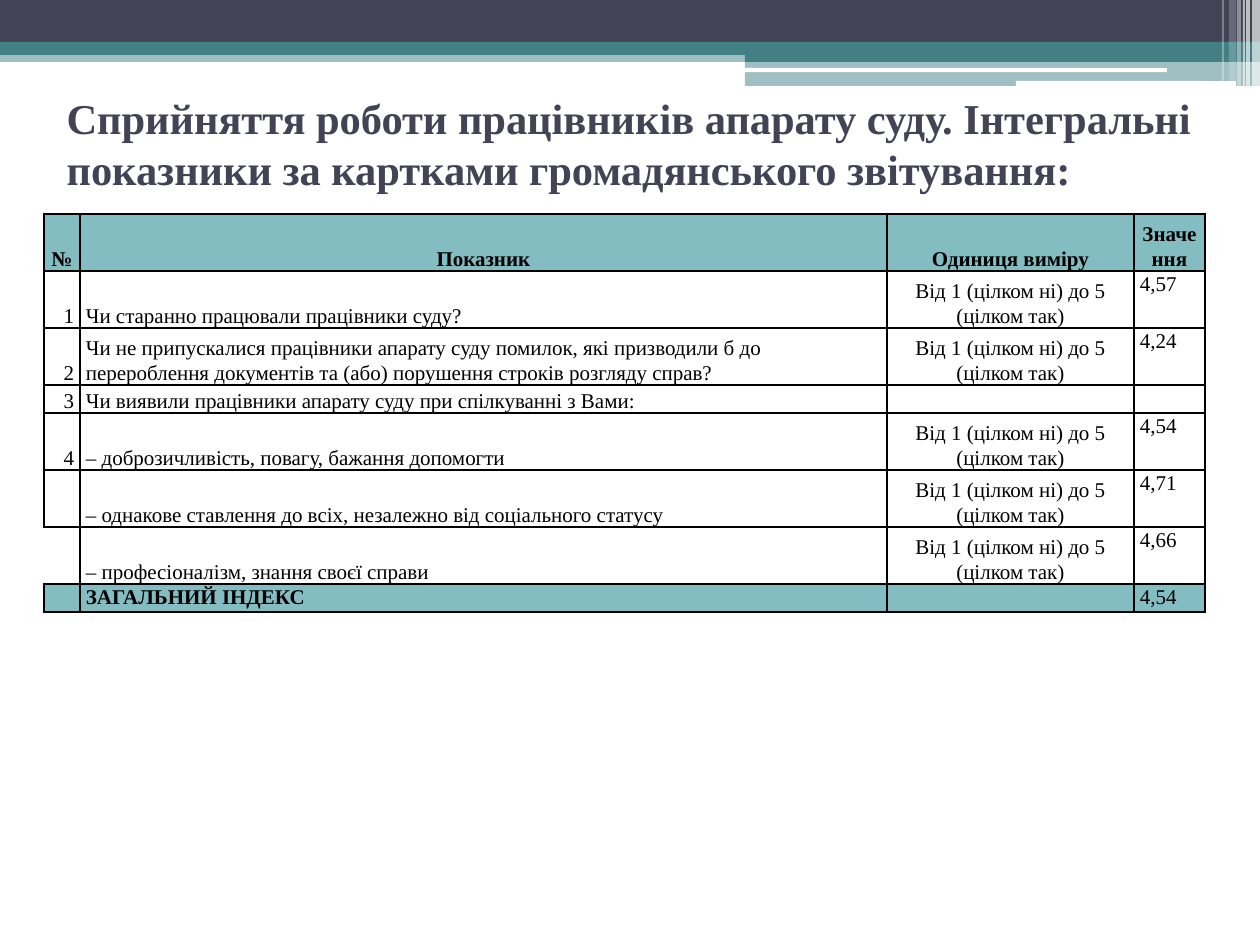
from lxml import etree
from pptx import Presentation
from pptx.dml.color import RGBColor
from pptx.enum.shapes import MSO_SHAPE
from pptx.enum.text import MSO_ANCHOR, MSO_AUTO_SIZE, PP_ALIGN
from pptx.oxml.ns import qn
from pptx.util import Emu, Pt

RECT, ROUND = MSO_SHAPE.RECTANGLE, MSO_SHAPE.ROUNDED_RECTANGLE
TOP, MIDDLE, BOTTOM = MSO_ANCHOR.TOP, MSO_ANCHOR.MIDDLE, MSO_ANCHOR.BOTTOM
LEFT, CENTER, RIGHT = PP_ALIGN.LEFT, PP_ALIGN.CENTER, PP_ALIGN.RIGHT

NAVY = RGBColor(0x42, 0x44, 0x56)
TEAL = RGBColor(0x43, 0x80, 0x86)
PALE_TEAL = RGBColor(0x83, 0xBC, 0xC1)
WHITE = RGBColor(0xFF, 0xFF, 0xFF)
BLACK = RGBColor(0, 0, 0)
FONT = "Times New Roman"
PX_PER_INCH = 126

TITLE = ("Сприйняття роботи працівників апарату суду. Інтегральні "
         "показники за картками громадянського звітування:")
SCALE_TEXT = "Від 1 (цілком ні) до 5 (цілком так)"
HEADER = ("№", "Показник", "Одиниця виміру", "Значення")
INDICATORS = [
    ("1", "Чи старанно працювали працівники суду?", SCALE_TEXT, "4,57"),
    ("2", "Чи не припускалися працівники апарату суду помилок, які призводили б до "
          "перероблення документів та (або) порушення строків розгляду справ?",
     SCALE_TEXT, "4,24"),
    ("3", "Чи виявили працівники апарату суду при спілкуванні з Вами:", "", ""),
    ("4", "– доброзичливість, повагу, бажання допомогти", SCALE_TEXT, "4,54"),
    ("", "– однакове ставлення до всіх, незалежно від соціального статусу",
     SCALE_TEXT, "4,71"),
    ("", "– професіоналізм, знання своєї справи", SCALE_TEXT, "4,66"),
]
TOTAL = ("", "ЗАГАЛЬНИЙ ІНДЕКС", "", "4,54")
COLUMN_WIDTHS = (36, 807, 247, 71)
ROW_HEIGHTS = (57, 57, 57, 28, 57, 57, 57, 28)
COLUMN_ALIGNS = (RIGHT, LEFT, CENTER, LEFT)
COLUMN_ANCHORS = (BOTTOM, BOTTOM, BOTTOM, TOP)

# Left, top, width, height, preset, colour, opacity in percent
BANDS = [
    (0, 50, 1260, 12, RECT, TEAL, 50),
    (0, 0, 1260, 42, RECT, NAVY, 100),
    (0, 42, 1260, 13, RECT, TEAL, 100),
    (745, 49, 515, 13, RECT, TEAL, 100),
    (745, 61, 515, 25, RECT, TEAL, 50),
    (745, 68, 422, 4, ROUND, WHITE, 100),
    (1016, 81, 220, 5, ROUND, WHITE, 100),
]
# Left, width, height, opacity in percent
STRIPES = [(1252, 8, 86, 65), (1246, 4, 86, 65), (1243, 2, 86, 60),
           (1237, 4, 86, 40), (1229, 7, 81, 20), (1222, 2, 81, 30)]


def px(length):
    return Emu(round(length * 914400 / PX_PER_INCH))


def set_all(target, values):
    for name, value in values.items():
        setattr(target, name, value)


def add_block(slide, box, preset, color, opacity):
    block = slide.shapes.add_shape(preset, *map(px, box))
    block.shadow.inherit = False
    block.line.fill.background()
    block.fill.solid()
    block.fill.fore_color.rgb = color
    if opacity < 100:
        srgb = block.fill._xPr.find(".//" + qn("a:srgbClr"))
        etree.SubElement(srgb, qn("a:alpha"), val=str(opacity * 1000))


def add_top_decoration(slide, left, top):
    for x, y, width, height, preset, color, opacity in BANDS:
        add_block(slide, (left + x, top + y, width, height), preset, color, opacity)
    for x, width, height, opacity in STRIPES:
        add_block(slide, (left + x, top, width, height), RECT, WHITE, opacity)


def place_title(slide, left, top, width, height):
    title = slide.shapes.title
    set_all(title, {"left": px(left), "top": px(top),
                    "width": px(width), "height": px(height)})
    frame = title.text_frame
    frame.text = TITLE
    set_all(frame, {"word_wrap": True, "auto_size": MSO_AUTO_SIZE.NONE,
                    "vertical_anchor": MIDDLE, "margin_top": 0, "margin_bottom": 0})
    paragraph = frame.paragraphs[0]
    set_all(paragraph, {"alignment": LEFT, "line_spacing": 1.0})
    set_all(paragraph.runs[0].font, {"name": FONT, "size": Pt(24.3), "bold": True})
    paragraph.runs[0].font.color.rgb = NAVY


def set_borders(cell, hidden):
    properties = cell._tc.get_or_add_tcPr()
    for position, tag in enumerate(("a:lnL", "a:lnR", "a:lnT", "a:lnB")):
        line = etree.Element(qn(tag), w=str(Pt(1)))
        if tag in hidden:
            etree.SubElement(line, qn("a:noFill"))
        else:
            fill = etree.SubElement(line, qn("a:solidFill"))
            etree.SubElement(fill, qn("a:srgbClr"), val=str(BLACK))
        properties.insert(position, line)


def fill_cell(cell, text, align, anchor, bold, shaded, hidden=()):
    set_all(cell, {"margin_left": px(6), "margin_right": px(6), "margin_top": 0,
                   "margin_bottom": 0, "vertical_anchor": anchor})
    if shaded:
        cell.fill.solid()
        cell.fill.fore_color.rgb = PALE_TEAL
    else:
        cell.fill.background()
    set_borders(cell, hidden)
    paragraph = cell.text_frame.paragraphs[0]
    set_all(paragraph, {"alignment": align, "line_spacing": 1.07})
    if text:
        run = paragraph.add_run()
        run.text = text
        set_all(run.font, {"name": FONT, "size": Pt(12), "bold": bold})
        run.font.color.rgb = BLACK
    else:
        # Keeps an empty cell from stretching its row
        etree.SubElement(paragraph._p, qn("a:endParaRPr"), sz="1200")


def add_indicator_table(slide, left, top):
    rows = [HEADER, *INDICATORS, TOTAL]
    table = slide.shapes.add_table(
        len(rows), len(HEADER), px(left), px(top),
        px(sum(COLUMN_WIDTHS)), px(sum(ROW_HEIGHTS))).table
    set_all(table, {"first_row": False, "horz_banding": False})
    for column, width in zip(table.columns, COLUMN_WIDTHS):
        column.width = px(width)
    for row, height in zip(table.rows, ROW_HEIGHTS):
        row.height = px(height)

    for r, texts in enumerate(rows):
        is_header, is_total = r == 0, r == len(rows) - 1
        for c, text in enumerate(texts):
            align = CENTER if is_header else COLUMN_ALIGNS[c]
            anchor = BOTTOM if is_header else TOP if is_total else COLUMN_ANCHORS[c]
            bold = is_header or (is_total and c == 1)
            # The last indicator's number cell is open on the left
            hidden = ("a:lnL",) if r == len(INDICATORS) and c == 0 else ()
            fill_cell(table.cell(r, c), text, align, anchor, bold,
                      is_header or is_total, hidden)


def main():
    presentation = Presentation()
    set_all(presentation, {"slide_width": px(1260), "slide_height": px(945)})
    slide = presentation.slides.add_slide(presentation.slide_layouts[5])
    add_top_decoration(slide, 0, 0)
    place_title(slide, 54, 70, 1271, 147)
    add_indicator_table(slide, 44, 214)
    presentation.save("out.pptx")


if __name__ == "__main__":
    main()
